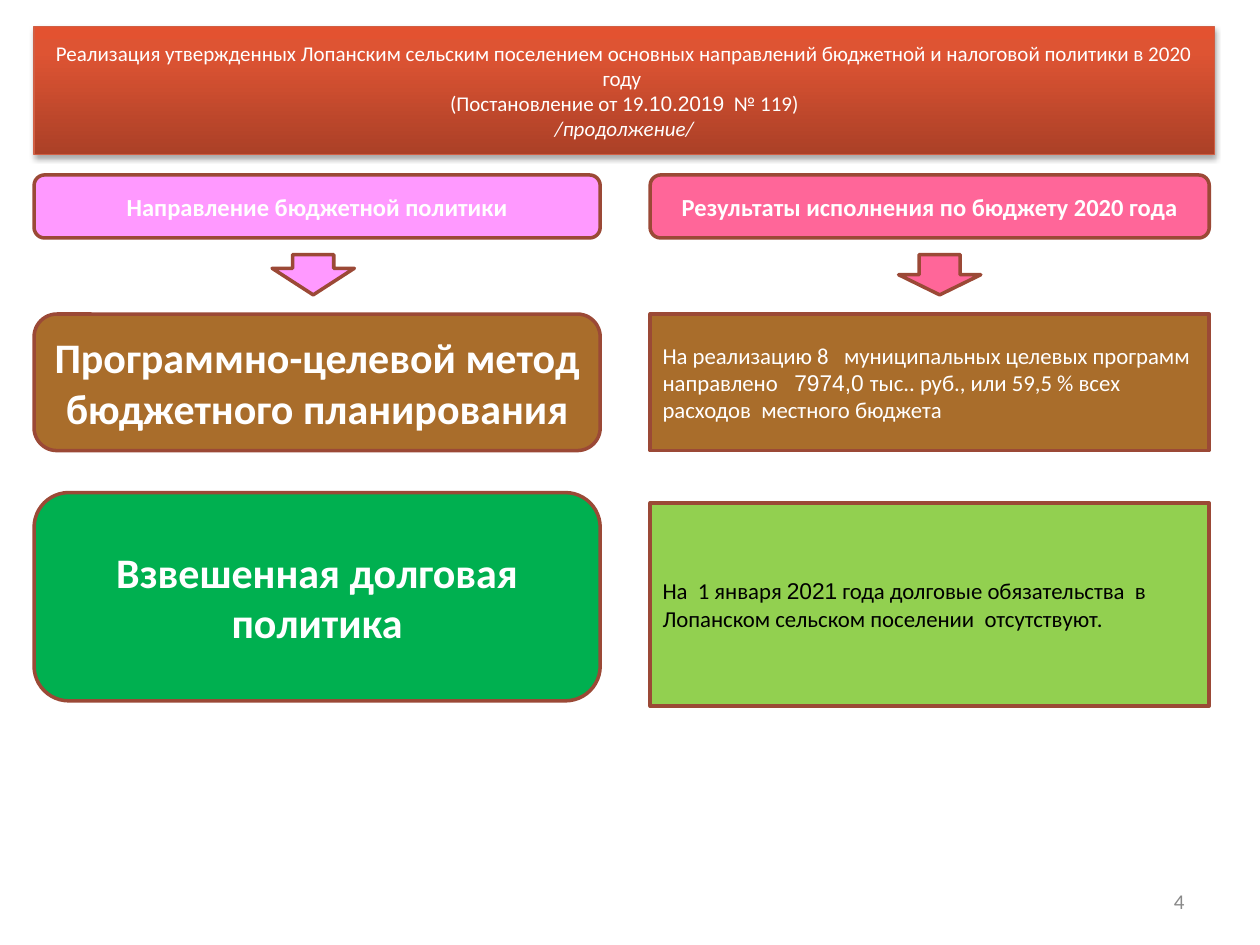
import copy

import pptx
import pptx.dml.color
import pptx.enum.shapes
import pptx.enum.text
import pptx.oxml
import pptx.oxml.ns
import pptx.util

Pt = pptx.util.Pt
RGB = pptx.dml.color.RGBColor
KIND = pptx.enum.shapes.MSO_SHAPE
ALIGN = pptx.enum.text.PP_ALIGN
MIDDLE = pptx.enum.text.MSO_ANCHOR.MIDDLE

WHITE = RGB(0xFF, 0xFF, 0xFF)
BLACK = RGB(0x00, 0x00, 0x00)
GRAY = RGB(0x89, 0x89, 0x89)
EDGE = RGB(0x9B, 0x49, 0x36)
RIM = RGB(0xD0, 0x5F, 0x44)
LILAC = RGB(0xFF, 0x99, 0xFF)
PINK = RGB(0xFF, 0x66, 0x99)
BROWN = RGB(0xA9, 0x6D, 0x2B)
GREEN = RGB(0x00, 0xB0, 0x50)
LIME = RGB(0x92, 0xD0, 0x50)
BLEND = [(0, RGB(0xAB, 0x40, 0x27)), (0.8, RGB(0xDE, 0x54, 0x33)),
         (1, RGB(0xE3, 0x52, 0x30))]

SHADOW = (
    '<a:effectLst %s><a:outerShdw blurRad="%d" dist="%d" dir="5400000" rotWithShape="0">'
    '<a:srgbClr val="000000"><a:alpha val="35000"/></a:srgbClr>'
    '</a:outerShdw></a:effectLst>'
    % (pptx.oxml.ns.nsdecls("a"), Pt(3.1), Pt(1.8)))


def write(shape, paras, size, color, align, bold=False):
    """Fill a shape with paragraphs, each a list of (text, font, italic) runs."""
    frame = shape.text_frame
    frame.word_wrap = True
    frame.vertical_anchor = MIDDLE
    for i, runs in enumerate(paras):
        para = frame.add_paragraph() if i else frame.paragraphs[0]
        para.alignment = align
        for text, face, slant in runs:
            run = para.add_run()
            run.text = text
            font = run.font
            font.name, font.size = face, Pt(size)
            font.bold, font.italic = bold, slant
            font.color.rgb = color


def plain(text):
    return (text, "Calibri", False)


def digits(text):
    return (text, "Arial", False)


def block(slide, kind, box, fill):
    shape = slide.shapes.add_shape(kind, *map(Pt, box))
    shape.shadow.inherit = False
    shape.fill.solid()
    shape.fill.fore_color.rgb = fill
    shape.line.color.rgb = EDGE
    shape.line.width = Pt(2)
    return shape


def banner(slide, box):
    title = slide.shapes.title
    title.left, title.top, title.width, title.height = map(Pt, box)
    title.fill.gradient()
    title.fill.gradient_angle = 90
    props = title.element.spPr
    stops = props.find(".//" + pptx.oxml.ns.qn("a:gsLst"))
    stops.insert(1, copy.deepcopy(stops[0]))
    for stop, (place, color) in zip(title.fill.gradient_stops, BLEND):
        stop.position = place
        stop.color.rgb = color
    title.line.color.rgb = RIM
    title.line.width = Pt(0.75)
    props.append(pptx.oxml.parse_xml(SHADOW))
    write(title, [
        [plain("Реализация утвержденных Лопанским сельским поселением основных "
               "направлений бюджетной и налоговой политики в 2020 году ")],
        [plain("(Постановление от 19."), digits("10"), plain("."),
         digits("2019"), plain("  № 119)")],
        [("/продолжение/", "Calibri", True)],
    ], 12, WHITE, ALIGN.CENTER)


def header(slide, box, text, fill, mid, head):
    """Column heading with a down arrow centred on mid below it."""
    x, y, w, h = box
    label = block(slide, KIND.ROUNDED_RECTANGLE, box, fill)
    write(label, [[plain(text)]], 14, WHITE, ALIGN.CENTER, True)
    arrow = block(slide, KIND.DOWN_ARROW, (mid - 23.5, y + h + 9.5, 47, 23), fill)
    arrow.adjustments[0] = 0.5
    arrow.adjustments[1] = head


def policy(slide, box, text, fill):
    card = block(slide, KIND.ROUNDED_RECTANGLE, box, fill)
    write(card, [[plain(text)]], 24, WHITE, ALIGN.CENTER, True)


def result(slide, box, runs, fill, color):
    card = block(slide, KIND.RECTANGLE, box, fill)
    write(card, [runs], 13, color, ALIGN.LEFT)


def number(slide, box):
    label = slide.shapes.add_textbox(*map(Pt, box))
    write(label, [[plain("4")]], 12, GRAY, ALIGN.RIGHT)


def main():
    deck = pptx.Presentation()
    deck.slide_width, deck.slide_height = Pt(720), Pt(540)
    slide = deck.slides.add_slide(deck.slide_layouts[5])
    left, wide = 19.5, 323.5
    right, slim = 371.5, 319.5

    banner(slide, (left, 15, 674.5, 73.5))
    header(slide, (left, 100, wide, 36), "Направление бюджетной политики",
           LILAC, 179, 0.66)
    header(slide, (right, 100, slim, 36),
           "Результаты исполнения по бюджету 2020 года", PINK, 537, 0.5)
    policy(slide, (left, 179.5, wide, 78),
           "Программно-целевой метод бюджетного планирования", BROWN)
    result(slide, (right, 179.5, slim, 78), [
        plain("На реализацию 8   муниципальных целевых программ направлено  "),
        digits(" 7974,0 "),
        plain("тыс.. руб., или 59,5 % всех расходов  местного бюджета"),
    ], BROWN, WHITE)
    policy(slide, (left, 281.5, wide, 119), "Взвешенная долговая политика", GREEN)
    result(slide, (right, 287.5, slim, 116), [
        plain("На  1 января "), digits("2021"),
        plain(" года долговые обязательства  в Лопанском сельском поселении"
              "  отсутствуют."),
    ], LIME, BLACK)
    number(slide, (516, 500.5, 168, 29))
    deck.save("out.pptx")


if __name__ == "__main__":
    main()
